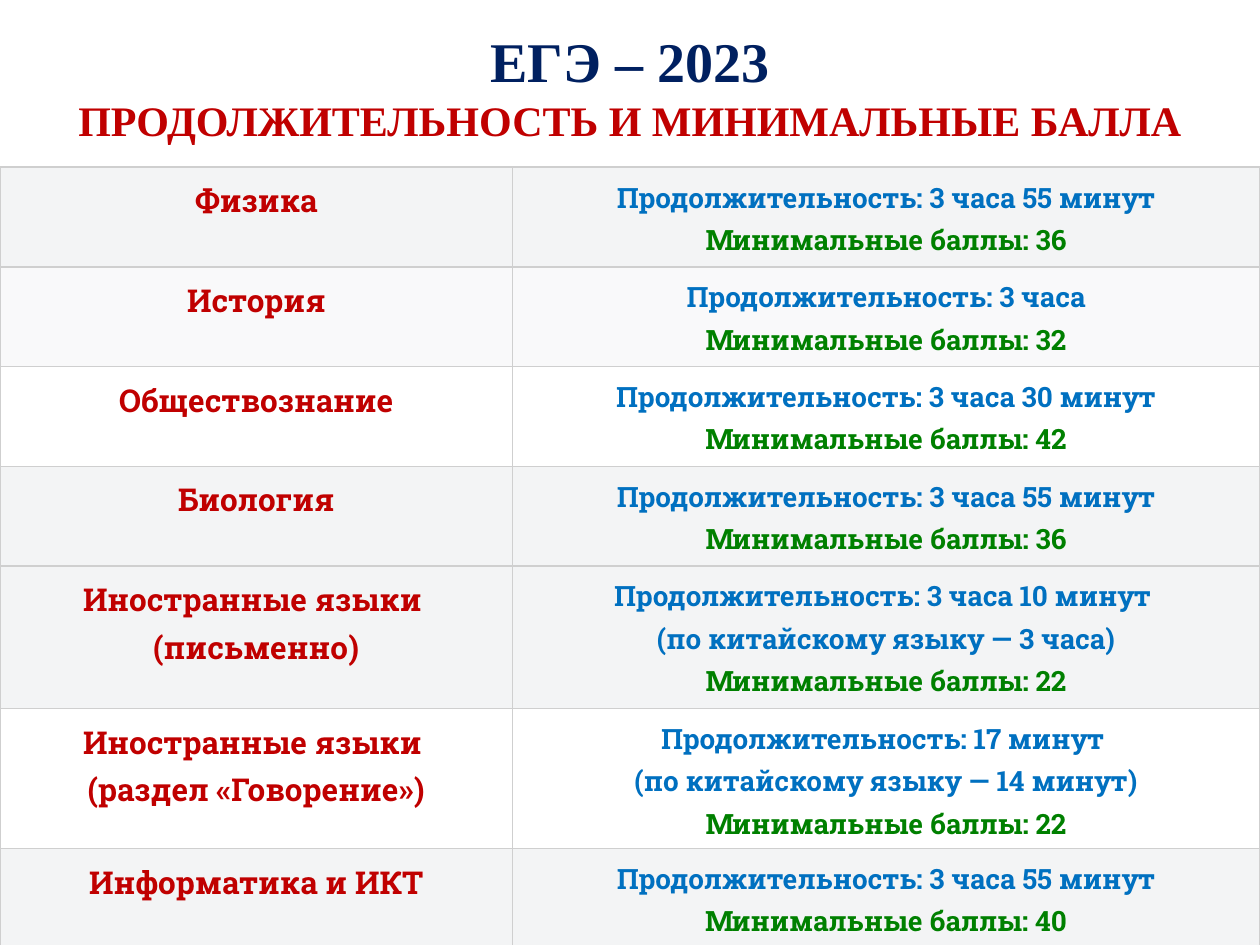
import copy
from dataclasses import dataclass

import pptx
import pptx.dml.color
import pptx.enum.text
import pptx.oxml
import pptx.oxml.ns
import pptx.util

Pt = pptx.util.Pt
CENTER = pptx.enum.text.PP_ALIGN.CENTER


@dataclass(frozen=True)
class Theme:
    title_font: str = "Times New Roman"
    table_font: str = "Roboto Slab"
    navy: str = "002060"
    red: str = "C00000"
    blue: str = "0070C0"
    green: str = "008000"
    border: str = "CFCFCF"
    gray: str = "F3F4F5"
    pale: str = "F9F9FA"
    white: str = "FFFFFF"
    title_size: float = 32
    subtitle_size: float = 24
    subject_size: float = 18
    detail_size: float = 16


THEME = Theme()

EXAMS = [
    (["Физика"], ["Продолжительность: 3 часа 55 минут"], 36, THEME.gray, 57),
    (["История"], ["Продолжительность: 3 часа"], 32, THEME.pale, 57),
    (["Обществознание"], ["Продолжительность: 3 часа 30 минут"], 42, THEME.white, 57),
    (["Биология"], ["Продолжительность: 3 часа 55 минут"], 36, THEME.gray, 57),
    (["Иностранные языки ", "(письменно)"],
     ["Продолжительность: 3 часа 10 минут ", "(по китайскому языку — 3 часа)"],
     22, THEME.gray, 81.5),
    (["Иностранные языки ", "(раздел «Говорение»)"],
     ["Продолжительность: 17 минут ", "(по китайскому языку — 14 минут)"],
     22, THEME.white, 80),
    (["Информатика и ИКТ"], ["Продолжительность: 3 часа 55 минут"], 40, THEME.gray, 55.4),
]


def color(value):
    return pptx.dml.color.RGBColor.from_string(value)


def write(para, text, *, font, size, ink, spacing=1.0, break_after=False):
    para.alignment = CENTER
    para.line_spacing = spacing
    span = para.add_run()
    span.text = text
    span.font.name = font
    span.font.size = Pt(size)
    span.font.bold = True
    span.font.color.rgb = color(ink)
    if break_after:
        para.add_line_break()
        para._p[-1].append(copy.deepcopy(span._r.rPr))


def paragraphs(frame, count):
    return [frame.paragraphs[0]] + [frame.add_paragraph() for _ in range(count - 1)]


def set_borders(cell, widths):
    properties = cell._tc.get_or_add_tcPr()
    for side, width in widths.items():
        properties.append(pptx.oxml.parse_xml(
            f'<a:ln{side} {pptx.oxml.ns.nsdecls("a")} w="{Pt(width)}">'
            f'<a:solidFill><a:srgbClr val="{THEME.border}"/></a:solidFill>'
            f'<a:prstDash val="solid"/></a:ln{side}>'))


def place_title(page, left, top, width, height):
    title = page.shapes.title
    title.left, title.top, title.width, title.height = map(Pt, (left, top, width, height))
    frame = title.text_frame
    frame.word_wrap = True
    frame.auto_size = pptx.enum.text.MSO_AUTO_SIZE.SHAPE_TO_FIT_TEXT
    frame.vertical_anchor = pptx.enum.text.MSO_ANCHOR.MIDDLE
    heading, subheading = paragraphs(frame, 2)
    write(heading, "ЕГЭ – 2023", font=THEME.title_font,
          size=THEME.title_size, ink=THEME.navy)
    write(subheading, "ПРОДОЛЖИТЕЛЬНОСТЬ И МИНИМАЛЬНЫЕ БАЛЛА", font=THEME.title_font,
          size=THEME.subtitle_size, ink=THEME.red)


def fill_cell(cell, fill, right_border):
    cell.margin_left = cell.margin_right = Pt(3.6)
    cell.margin_top = cell.margin_bottom = Pt(3.6)
    set_borders(cell, {"L": 1, "R": right_border, "T": 1, "B": 1})
    cell.fill.solid()
    cell.fill.fore_color.rgb = color(fill)


def place_exam_table(page, left, top, width):
    height = sum(exam[-1] for exam in EXAMS)
    table = page.shapes.add_table(
        len(EXAMS), 2, Pt(left), Pt(top), Pt(width), Pt(height)).table
    table.first_row = table.horz_banding = False
    subject_width = 292.8
    table.columns[0].width = Pt(subject_width)
    table.columns[1].width = Pt(width - subject_width)
    subject_style = dict(font=THEME.table_font, size=THEME.subject_size, spacing=1.15)
    detail_style = dict(font=THEME.table_font, size=THEME.detail_size, spacing=1.15)

    for row, (subject, duration, score, fill, row_height) in enumerate(EXAMS):
        table.rows[row].height = Pt(row_height)
        subject_cell, detail_cell = table.cell(row, 0), table.cell(row, 1)
        fill_cell(subject_cell, fill, right_border=1)
        fill_cell(detail_cell, fill, right_border=1.5)
        for para, text in zip(paragraphs(subject_cell.text_frame, len(subject)), subject):
            write(para, text, ink=THEME.red, **subject_style)
        details = paragraphs(detail_cell.text_frame, len(duration))
        for para, text in zip(details, duration):
            write(para, text, ink=THEME.blue, break_after=para is details[-1], **detail_style)
        write(details[-1], f"Минимальные баллы: {score}", ink=THEME.green, **detail_style)


def main():
    deck = pptx.Presentation()
    deck.slide_width, deck.slide_height = Pt(720), Pt(540)
    page = deck.slides.add_slide(deck.slide_layouts.get_by_name("Title Only"))
    place_title(page, 22.5, 11.5, 675, 75)
    place_exam_table(page, 0, 95.5, 720)
    deck.save("out.pptx")


if __name__ == "__main__":
    main()
